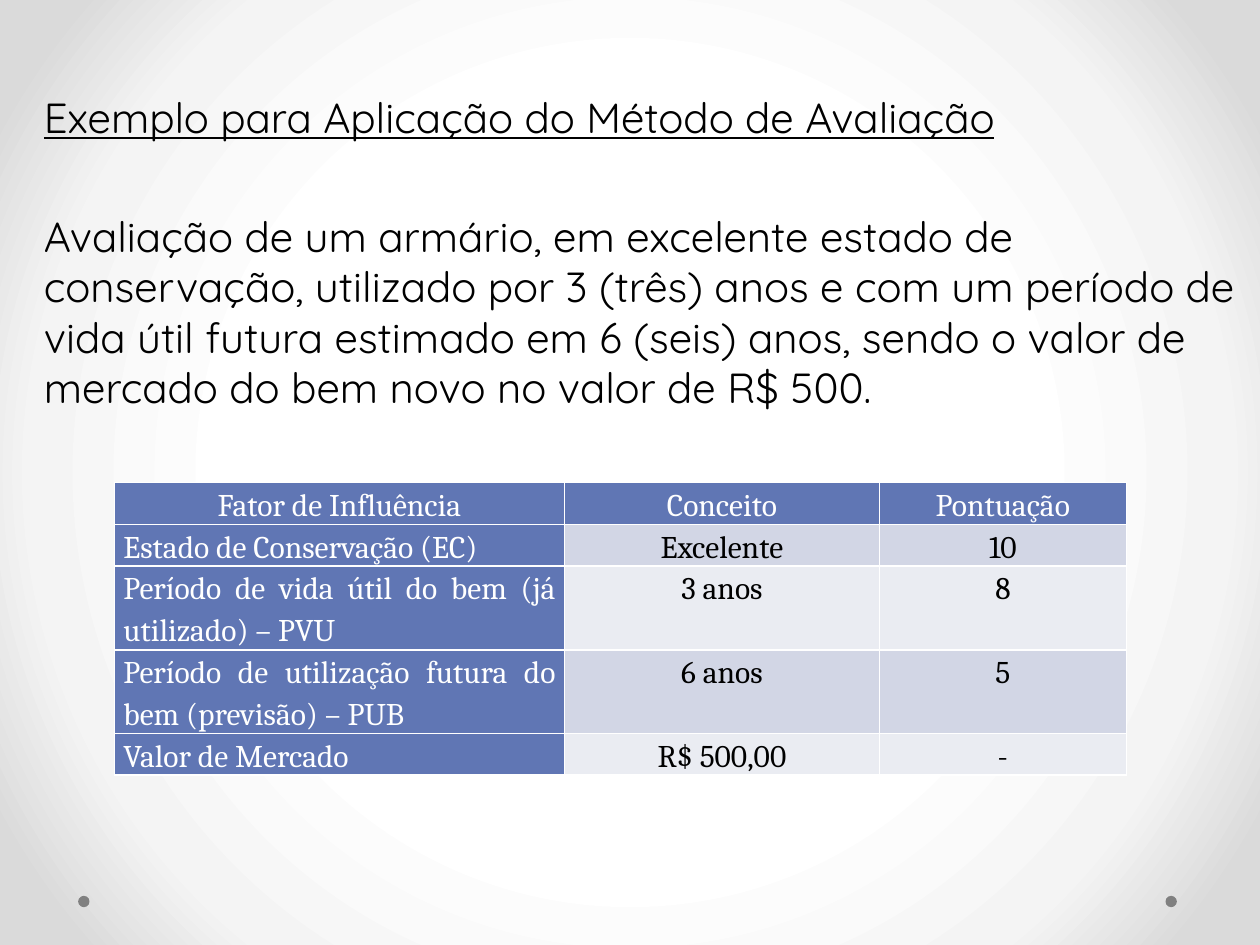
from lxml.etree import SubElement
from pptx import Presentation
from pptx.dml.color import RGBColor
from pptx.enum.shapes import MSO_SHAPE as Shape
from pptx.enum.text import PP_ALIGN as Align
from pptx.oxml.ns import qn
from pptx.util import Inches, Pt

COLORS = {
    "text": "000000",
    "white": "FFFFFF",
    "header": "6076B4",
    "band_dark": "D2D6E5",
    "band_light": "EAECF2",
    "dot": "808080",
}
BACKGROUND_STOPS = [(50, "FFFFFF"), (76, "F4F4F4"), (92, "DADADA")]

TITLE = "Exemplo para Aplicação do Método de Avaliação"
DESCRIPTION = (
    "Avaliação de um armário, em excelente estado de conservação, utilizado "
    "por 3 (três) anos e com um período de vida útil futura estimado em "
    "6 (seis) anos, sendo o valor de mercado do bem novo no valor de R$ 500."
)
FACTORS = [
    ("Fator de Influência", "Conceito", "Pontuação"),
    ("Estado de Conservação (EC)", "Excelente", "10"),
    ("Período de vida útil do bem (já utilizado) – PVU", "3 anos", "8"),
    ("Período de utilização futura do bem (previsão) – PUB", "6 anos", "5"),
    ("Valor de Mercado", "R$ 500,00", "-"),
]
COLUMN_WIDTHS = [3.57, 2.5, 1.96]
ROW_HEIGHTS = [0.33, 0.33, 0.66, 0.66, 0.33]


def rgb(name):
    return RGBColor.from_string(COLORS[name])


class SlideBuilder:
    body_font = "Quicksand"
    table_font = "Cambria"

    def __init__(self, slide):
        self.slide = slide

    def radial_background(self, stops):
        """Fill the background with circles spreading from the centre."""
        self.slide.background.fill.solid()
        properties = self.slide.element.find(".//" + qn("p:bgPr"))
        solid = properties.find(qn("a:solidFill"))
        gradient = properties.makeelement(qn("a:gradFill"), {"rotWithShape": "1"})
        properties.replace(solid, gradient)
        stop_list = SubElement(gradient, qn("a:gsLst"))
        for percent, color in stops:
            stop = SubElement(stop_list, qn("a:gs"), pos=str(percent * 1000))
            SubElement(stop, qn("a:srgbClr"), val=color)
        circle = SubElement(gradient, qn("a:path"), {"path": "circle"})
        SubElement(circle, qn("a:fillToRect"), {side: "50000" for side in "ltrb"})

    def dot(self, left, top, size):
        shape = self.slide.shapes.add_shape(
            Shape.OVAL, Inches(left), Inches(top), Inches(size), Inches(size))
        shape.shadow.inherit = False
        shape.fill.solid()
        shape.fill.fore_color.rgb = rgb("dot")
        shape.line.fill.background()

    def style(self, paragraph, font, size, color, align):
        paragraph.alignment = align
        paragraph.font.name = font
        paragraph.font.size = Pt(size)
        paragraph.font.color.rgb = rgb(color)

    def text(self, left, top, width, height, title, description):
        box = self.slide.shapes.add_textbox(
            Inches(left), Inches(top), Inches(width), Inches(height))
        frame = box.text_frame
        frame.word_wrap = True
        heading, body = frame.paragraphs[0], frame.add_paragraph()
        for paragraph, content in ((heading, title), (body, description)):
            paragraph.text = content
            self.style(paragraph, self.body_font, 24, "text", Align.LEFT)
        heading.font.underline = True
        body.space_before = Pt(39)

    def table(self, left, top, widths, heights, rows):
        table = self.slide.shapes.add_table(
            len(rows), len(widths), Inches(left), Inches(top),
            Inches(sum(widths)), Inches(sum(heights))).table
        table.horz_banding = False
        for column, width in zip(table.columns, widths):
            column.width = Inches(width)
        for row, height in zip(table.rows, heights):
            row.height = Inches(height)
        for i, row in enumerate(rows):
            band = "band_dark" if i % 2 else "band_light"
            for j, content in enumerate(row):
                is_header = i == 0 or j == 0
                align = Align.JUSTIFY if i and j == 0 else Align.CENTER
                self.cell(table.cell(i, j), content,
                          "header" if is_header else band,
                          "white" if is_header else "text", align)

    def cell(self, cell, content, fill, color, align):
        cell.margin_left = cell.margin_right = Inches(0.07)
        cell.margin_top = cell.margin_bottom = 0
        self.borders(cell, "white", 1)
        cell.fill.solid()
        cell.fill.fore_color.rgb = rgb(fill)
        cell.text = content
        paragraph = cell.text_frame.paragraphs[0]
        paragraph.line_spacing = 1.15
        self.style(paragraph, self.table_font, 18, color, align)
        paragraph.font.bold = False

    def borders(self, cell, color, width):
        properties = cell._tc.get_or_add_tcPr()
        for side in ("lnL", "lnR", "lnT", "lnB"):
            line = SubElement(properties, qn("a:" + side), w=str(Pt(width)))
            solid = SubElement(line, qn("a:solidFill"))
            SubElement(solid, qn("a:srgbClr"), val=COLORS[color])


def main():
    presentation = Presentation()
    presentation.slide_width = Inches(10)
    presentation.slide_height = Inches(7.5)
    blank = presentation.slide_layouts[6]
    builder = SlideBuilder(presentation.slides.add_slide(blank))

    builder.radial_background(BACKGROUND_STOPS)
    for left in (9.25, 0.62):
        builder.dot(left, 7.11, 0.09)
    builder.table(0.91, 3.83, COLUMN_WIDTHS, ROW_HEIGHTS, FACTORS)
    builder.text(0.25, 0.68, 9.72, 2.61, TITLE, DESCRIPTION)

    presentation.save("out.pptx")


if __name__ == "__main__":
    main()
